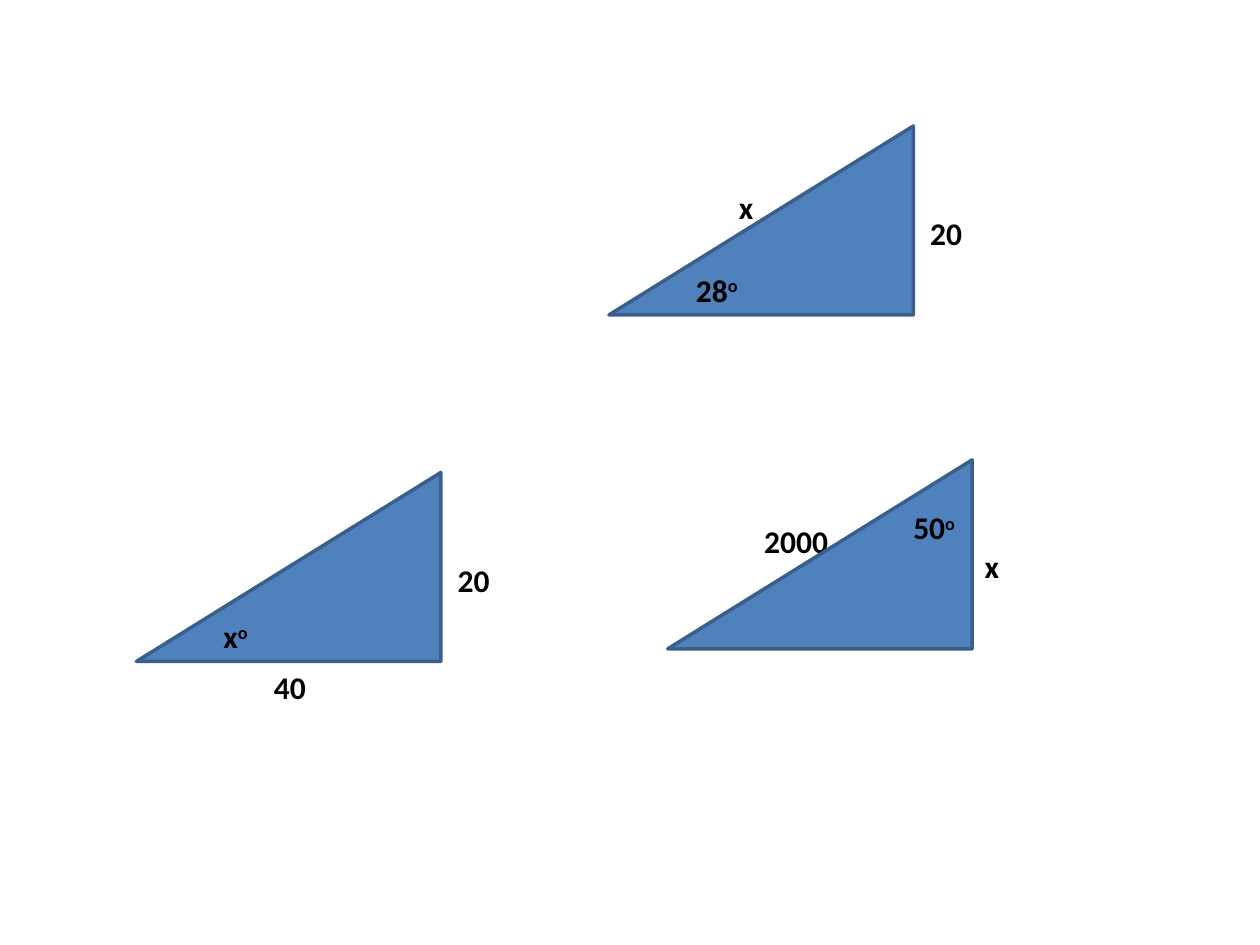
from dataclasses import dataclass

from pptx import Presentation, util as u
from pptx.dml.color import RGBColor
from pptx.enum import shapes, text


@dataclass(frozen=True)
class Theme:
    font: str = "Calibri"
    size: int = 18
    ink: RGBColor = RGBColor.from_string("000000")
    fill: RGBColor = RGBColor.from_string("4F81BD")
    outline: RGBColor = RGBColor.from_string("3A5F8C")
    line_width: int = 2


class TriangleSlide:
    """Places labelled right triangles on a grid of 120 columns by 90 rows."""
    COLUMNS, ROWS = 120, 90
    TRIANGLE = (29, 18)
    LABEL_ROWS = 4.8

    def __init__(self, presentation, theme):
        self.theme = theme
        self.slide = presentation.slides.add_slide(presentation.slide_layouts[6])
        self.column = presentation.slide_width / self.COLUMNS
        self.row = presentation.slide_height / self.ROWS

    def start_problem(self, column, row):
        """Open a group whose triangle has its box corner at this grid point."""
        self.origin = (column, row)
        self.group = self.slide.shapes.add_group_shape()

    def box(self, column, row, columns, rows):
        left, top = self.origin
        return (round((left + column) * self.column), round((top + row) * self.row),
                round(columns * self.column), round(rows * self.row))

    def triangle(self):
        shape = self.group.shapes.add_shape(
            shapes.MSO_SHAPE.RIGHT_TRIANGLE, *self.box(0, 0, *self.TRIANGLE))
        shape._element.spPr.xfrm.set("flipH", "1")
        shape.shadow.inherit = False
        shape.fill.solid()
        shape.fill.fore_color.rgb = self.theme.fill
        shape.line.color.rgb = self.theme.outline
        shape.line.width = u.Pt(self.theme.line_width)

    def label(self, words, column, row, columns, degrees=False, wrap=True):
        shape = self.group.shapes.add_textbox(
            *self.box(column, row, columns, self.LABEL_ROWS))
        frame = shape.text_frame
        frame.word_wrap = wrap
        frame.auto_size = text.MSO_AUTO_SIZE.SHAPE_TO_FIT_TEXT
        paragraph = frame.paragraphs[0]
        font = paragraph.font
        font.name, font.size, font.bold = self.theme.font, u.Pt(self.theme.size), True
        font.color.rgb = self.theme.ink
        paragraph.add_run().text = words
        if degrees:
            sign = paragraph.add_run()
            sign.text = "o"
            sign._r.get_or_add_rPr().set("baseline", "30000")

    def angle(self, words, column, row, columns):
        self.label(words, column, row, columns, degrees=True, wrap=False)


def main():
    presentation = Presentation()
    presentation.slide_width, presentation.slide_height = u.Inches(10), u.Inches(7.5)
    page = TriangleSlide(presentation, Theme())

    page.start_problem(58, 12)
    page.triangle()
    page.label("20", 29.4, 7.8, 6.5)
    page.label("x", 11.2, 5.3, 5)
    page.angle("28", 7.1, 13.2, 6.6)

    page.start_problem(13, 45)
    page.triangle()
    page.label("20", 29.4, 7.8, 6.5)
    page.angle("x", 7.1, 13.2, 4.8)
    page.label("40", 11.9, 18, 6.5)

    page.start_problem(63.6, 43.8)
    page.label("2000", 8, 5.3, 8.5, wrap=False)
    page.triangle()
    page.label("x", 29, 7.7, 5)
    page.angle("50", 22.2, 4, 6.6)

    presentation.save("out.pptx")


if __name__ == "__main__":
    main()
